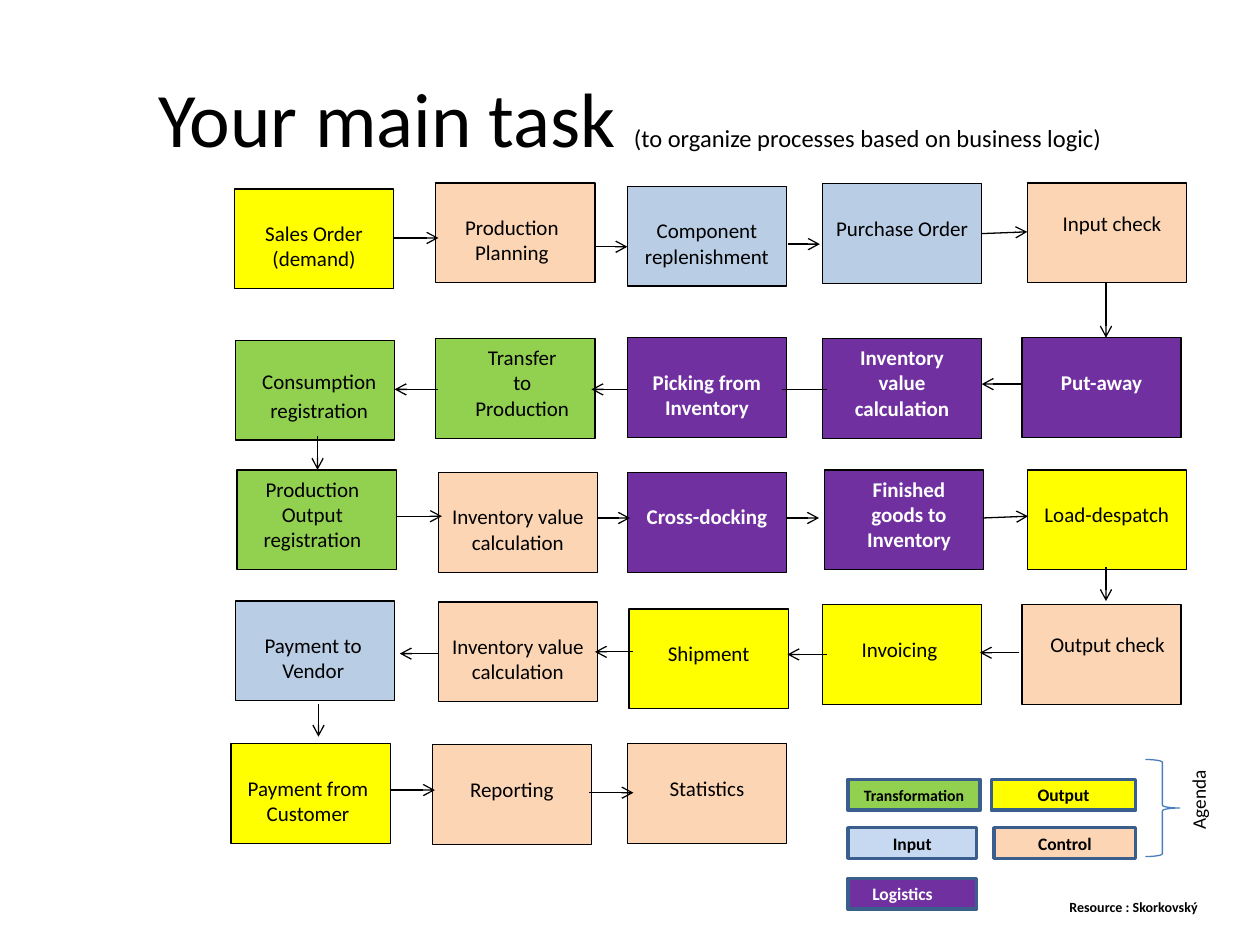
from lxml import etree
from pptx import Presentation
from pptx.dml.color import RGBColor
from pptx.enum.shapes import MSO_CONNECTOR, MSO_SHAPE
from pptx.enum.text import MSO_ANCHOR, PP_ALIGN
from pptx.oxml.ns import qn
from pptx.util import Pt

COLORS = {
    "black": "000000", "white": "FFFFFF", "output": "FFFF00",
    "control": "FCD5B5", "input": "B9CDE5", "transformation": "92D050",
    "logistics": "7030A0", "legend_input": "C6D9F1",
    "legend_line": "3A5F8C", "brace": "4B7EBC",
}


def write_text(shape, text, size=12, bold=False, color="black",
               align=PP_ALIGN.CENTER, anchor=MSO_ANCHOR.TOP, top=3.6,
               left=7.2, right=7.2, wrap=True, line_gap=0):
    """Append text to the last paragraph; each newline starts a new one."""
    frame = shape.text_frame
    frame.word_wrap = wrap
    frame.vertical_anchor = anchor
    frame.margin_top, frame.margin_bottom = Pt(top), Pt(3.6)
    frame.margin_left, frame.margin_right = Pt(left), Pt(right)
    for index, line in enumerate(text.split("\n")):
        paragraph = frame.add_paragraph() if index else frame.paragraphs[-1]
        paragraph.alignment = align
        if index and line_gap:
            paragraph.space_before = Pt(line_gap)
        run = paragraph.add_run()
        run.text = line
        run.font.name = "Calibri"
        run.font.size = Pt(size)
        run.font.bold = bold
        run.font.color.rgb = RGBColor.from_string(COLORS[color])


def add_box(left, top, width, height, fill, line="black", line_width=0.75):
    box = slide.shapes.add_shape(MSO_SHAPE.RECTANGLE, Pt(left), Pt(top),
                                 Pt(width), Pt(height))
    box.shadow.inherit = False
    box.fill.solid()
    box.fill.fore_color.rgb = RGBColor.from_string(COLORS[fill])
    box.line.color.rgb = RGBColor.from_string(COLORS[line])
    box.line.width = Pt(line_width)
    return box


presentation = Presentation()
presentation.slide_width, presentation.slide_height = Pt(720), Pt(540)
slide = presentation.slides.add_slide(presentation.slide_layouts[6])

title = slide.shapes.add_textbox(Pt(36), Pt(21.6), Pt(648), Pt(90))
write_text(title, "Your main task ", size=44, anchor=MSO_ANCHOR.MIDDLE)
write_text(title, "(to organize processes based on business logic)", size=14,
           anchor=MSO_ANCHOR.MIDDLE)

# Process steps: left, top, kind, text, differences from the usual format
STEP_WIDTH, STEP_HEIGHT, TEXT_TOP = 91, 57, 18
steps = [
    (134, 108, "output", "Sales Order\n(demand)", {}),
    (249, 104.5, "control", "Production\nPlanning", {"right": 11}),
    (358.5, 106.5, "input", "Component\nreplenishment", {}),
    (470, 105, "input", "Purchase Order", {}),
    (587, 104.5, "control", "Input check", {"top": 15.5, "left": 13}),
    (584, 193, "logistics", "Put-away", {}),
    (470, 193.5, "logistics", "Inventory\nvalue\ncalculation", {"top": 3.6}),
    (358.5, 193, "logistics", "Picking from\nInventory", {}),
    (249, 193.5, "transformation", "Transfer\nto\nProduction",
     {"top": 3.6, "left": 15}),
    (134.5, 194.5, "transformation", "Consumption\nregistration",
     {"top": 16, "left": 12, "line_gap": 2}),
    (135.5, 268.5, "transformation", "Production\nOutput\nregistration",
     {"top": 3.6, "right": 12}),
    (250.5, 270, "control", "Inventory value\ncalculation", {}),
    (358.5, 270, "logistics", "Cross-docking", {}),
    (471, 268.5, "logistics", "Finished\ngoods to\nInventory",
     {"top": 3.6, "left": 13}),
    (587, 268.5, "output", "Load-despatch", {}),
    (584, 345.5, "control", "Output check", {"top": 15.5, "left": 14}),
    (470, 345.5, "output", "Invoicing", {"right": 10}),
    (359.5, 348, "output", "Shipment", {}),
    (250.5, 344, "control", "Inventory value\ncalculation", {}),
    (134.5, 343.5, "input", "Payment to\nVendor", {"right": 9}),
    (132, 425, "output", "Payment from\nCustomer", {"right": 10}),
    (247, 425.5, "control", "Reporting", {}),
    (358.5, 425, "control", "Statistics", {}),
]
for left, top, kind, text, changes in steps:
    step = add_box(left, top, STEP_WIDTH, STEP_HEIGHT, kind)
    is_dark = kind == "logistics"
    write_text(step, text, bold=is_dark, color="white" if is_dark else "black",
               **{"top": TEXT_TOP, **changes})

# Flow lines: start x, start y, end x, end y
plain_line = (472.5, 222.5, 447, 222.5)
flow_lines = [
    (225, 136, 250.5, 136), (340, 141, 358.5, 141), (450, 139.5, 468.5, 139.5),
    (561, 133.5, 587, 132.5), (632, 161, 632, 193),
    (583.5, 219.5, 561, 219.5), plain_line, (358.5, 222.5, 338, 222.5),
    (250.5, 222.5, 225.5, 222.5), (181.5, 249, 181.5, 268.5),
    (227, 295, 252.5, 295), (341, 296, 360, 296), (449.5, 296, 468, 296),
    (561.5, 296, 587.5, 295), (632, 324, 632, 343.5),
    (582.5, 373, 560, 373), (472.5, 374, 450, 374), (361.5, 372.5, 340, 372.5),
    (250.5, 373.5, 228.5, 373.5), (182, 402.5, 182, 421),
    (223, 451.5, 248.5, 451.5), (336.5, 453, 362, 453),
]
for ends in flow_lines:
    connector = slide.shapes.add_connector(MSO_CONNECTOR.STRAIGHT,
                                           *(Pt(value) for value in ends))
    connector.line.color.rgb = RGBColor.from_string(COLORS["black"])
    connector.line.width = Pt(0.75)
    properties = connector._element.spPr
    if ends != plain_line:
        line_element = properties.find(qn("a:ln"))
        etree.SubElement(line_element, qn("a:tailEnd"), type="arrow")
    etree.SubElement(properties, qn("a:effectLst"))

# Legend: left, top, width, fill, text, differences from the usual format
legend = [
    (484.5, 445.5, 75.5, "transformation", "Transformation", {"size": 9}),
    (566.5, 445.5, 82.5, "output", "Output", {}),
    (484.5, 473, 73.5, "legend_input", "Input", {}),
    (568, 473, 81, "control", "Control", {}),
    (484.5, 502, 73.5, "logistics", "Logistics",
     {"color": "white", "align": PP_ALIGN.LEFT, "left": 14}),
]
for left, top, width, fill, text, changes in legend:
    key = add_box(left, top, width, 17.5, fill, "legend_line", 2)
    write_text(key, text, bold=True, anchor=MSO_ANCHOR.MIDDLE,
               **{"size": 10, **changes})

brace = slide.shapes.add_shape(MSO_SHAPE.RIGHT_BRACE, Pt(654.5), Pt(434),
                               Pt(19.5), Pt(55.5))
brace.shadow.inherit = False
brace.fill.background()
brace.line.color.rgb = RGBColor.from_string(COLORS["brace"])
brace.line.width = Pt(0.75)

agenda = slide.shapes.add_textbox(Pt(674.5), Pt(440), Pt(28), Pt(41))
write_text(agenda, "Agenda", size=11, align=PP_ALIGN.LEFT, wrap=False)
agenda.text_frame._txBody.bodyPr.set("vert", "vert270")

resource = slide.shapes.add_textbox(Pt(604), Pt(510), Pt(91), Pt(17))
write_text(resource, "Resource : Skorkovský", size=8, bold=True,
           align=PP_ALIGN.LEFT, wrap=False)

presentation.save("out.pptx")
